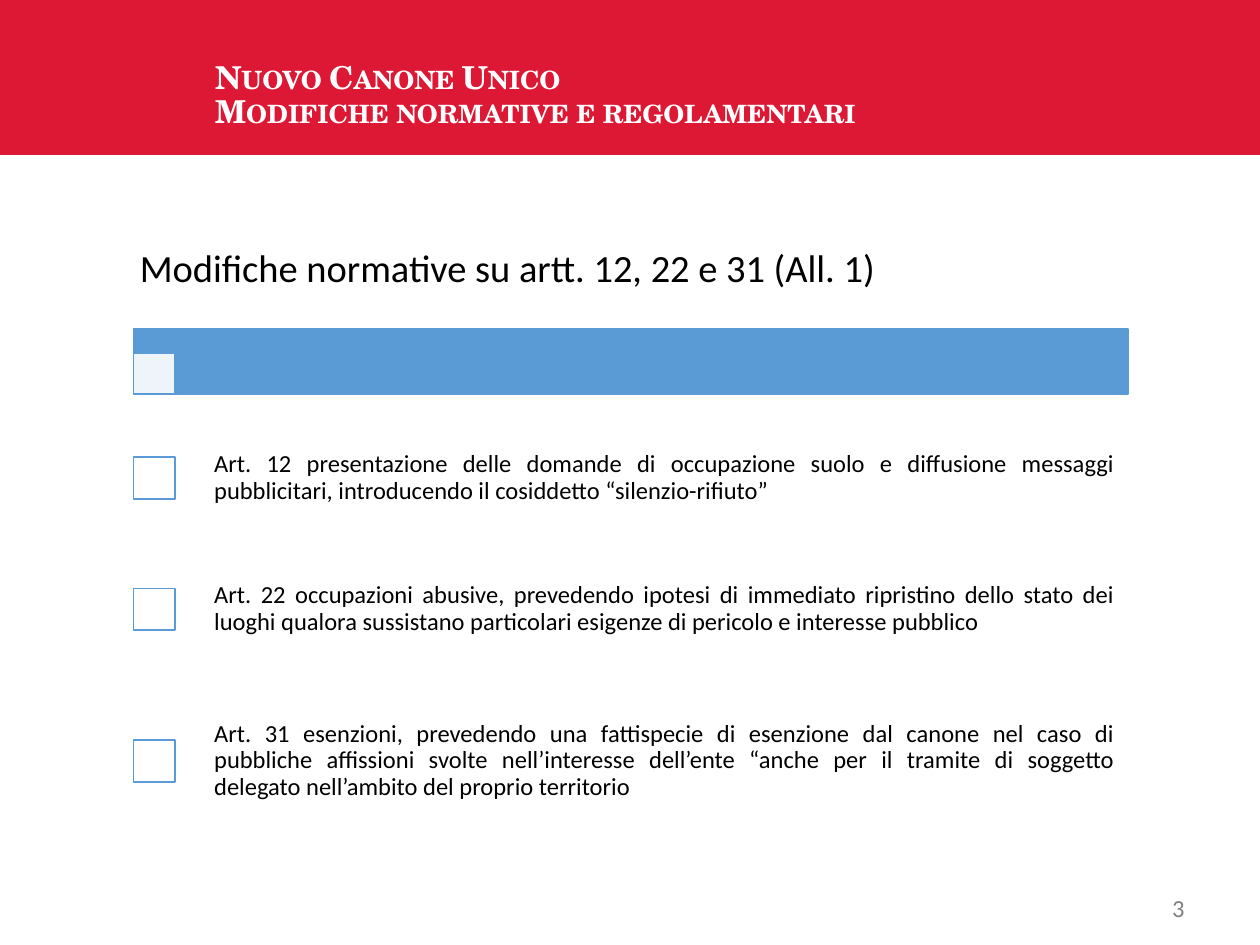
"""Build the slide on the regulatory changes to articles 12, 22 and 31."""
from dataclasses import dataclass

from lxml import etree
from pptx import Presentation
from pptx.dml.color import RGBColor
from pptx.enum.shapes import MSO_SHAPE
from pptx.enum.text import MSO_ANCHOR, PP_ALIGN
from pptx.oxml.ns import qn
from pptx.util import Inches, Pt

RECTANGLE = MSO_SHAPE.RECTANGLE
MIDDLE, BOTTOM = MSO_ANCHOR.MIDDLE, MSO_ANCHOR.BOTTOM
LEFT, RIGHT, JUSTIFY = PP_ALIGN.LEFT, PP_ALIGN.RIGHT, PP_ALIGN.JUSTIFY


@dataclass(frozen=True)
class Theme:
    red: str = "DD1835"
    blue: str = "5B9BD5"
    white: str = "FFFFFF"
    black: str = "000000"
    grey: str = "808080"
    title_font: str = "TeX Gyre Schola"
    body_font: str = "Calibri"
    title_size: int = 18
    subject_size: int = 22
    body_size: int = 14


theme = Theme()
deck = Presentation()
deck.slide_width, deck.slide_height = Inches(10), Inches(7.5)
COLUMN, ROW = deck.slide_width / 100, deck.slide_height / 75
slide = deck.slides.add_slide(deck.slide_layouts[6])


def add_block(left, top, width, height, fill, outline=None):
    block = slide.shapes.add_shape(RECTANGLE, int(left * COLUMN), int(top * ROW),
                                   int(width * COLUMN), int(height * ROW))
    block.shadow.inherit = False
    block.fill.solid()
    block.fill.fore_color.rgb = RGBColor.from_string(fill)
    if outline:
        block.line.color.rgb = RGBColor.from_string(outline)
        block.line.width = Pt(1)
    else:
        block.line.fill.background()
    return block


def add_words(left, top, width, height, words, size, color, font=theme.body_font,
              anchor=MIDDLE, align=LEFT, inset=(0.1, 0.05), spacing=0.9):
    frame = slide.shapes.add_textbox(int(left * COLUMN), int(top * ROW),
                                     int(width * COLUMN), int(height * ROW)).text_frame
    frame.word_wrap = True
    frame.vertical_anchor = anchor
    frame.margin_left = frame.margin_right = Inches(inset[0])
    frame.margin_top = frame.margin_bottom = Inches(inset[1])
    paragraph = frame.paragraphs[0]
    paragraph.text = words
    paragraph.alignment = align
    paragraph.line_spacing = spacing
    for run in paragraph.runs:
        run.font.name = font
        run.font.size = Pt(size)
        run.font.color.rgb = RGBColor.from_string(color)
    return paragraph


add_block(0, 0, 100, 12.3, theme.red)
add_words(71.7, 70.6, 23.3, 2.9, "3", theme.body_size, theme.grey,
          align=RIGHT, spacing=1.0)
title = add_words(16.1, 4.7, 78.9, 6.1,
                  "Nuovo Canone Unico\nModifiche normative e regolamentari",
                  theme.title_size, theme.white, theme.title_font, BOTTOM)
for run in title.runs:
    run.font.bold = True
    run.font._element.set("cap", "small")

MARGIN, CONTENT, MARKER = 10.6, 78.9, 3.3
ARTICLE_LEFT, ARTICLE_WIDTH = 16.1, 73.3
BAR_TOP, BAR_HEIGHT = 26.1, 5.2

add_block(MARGIN, BAR_TOP, CONTENT, BAR_HEIGHT, theme.blue, theme.blue)
bar_marker = add_block(MARGIN, BAR_TOP + BAR_HEIGHT - MARKER, MARKER, MARKER,
                       theme.white, theme.blue)
marker_color = bar_marker.fill._xPr.find(qn("a:solidFill"))[0]
etree.SubElement(marker_color, qn("a:alpha")).set("val", "90000")
add_words(MARGIN, 16.7, CONTENT, 9.4,
          "Modifiche normative su artt. 12, 22 e 31 (All. 1)",
          theme.subject_size, theme.black, inset=(0.05, 0.03))

articles = [
    (9.1, "Art. 12 presentazione delle domande di occupazione suolo e diffusione "
          "messaggi pubblicitari, introducendo il cosiddetto “silenzio-rifiuto”"),
    (11.7, "Art. 22 occupazioni abusive, prevedendo ipotesi di immediato ripristino "
           "dello stato dei luoghi qualora sussistano particolari esigenze di "
           "pericolo e interesse pubblico"),
    (12.4, "Art. 31 esenzioni, prevedendo una fattispecie di esenzione dal canone nel "
           "caso di pubbliche affissioni svolte nell’interesse dell’ente “anche per "
           "il tramite di soggetto delegato nell’ambito del proprio territorio"),
]
article_top = 33.4
for article_height, article in articles:
    add_block(MARGIN, article_top + (article_height - MARKER) / 2, MARKER, MARKER,
              theme.white, theme.blue)
    add_words(ARTICLE_LEFT, article_top, ARTICLE_WIDTH, article_height, article,
              theme.body_size, theme.black, align=JUSTIFY, inset=(0.09, 0.09))
    article_top += article_height

deck.save("out.pptx")
